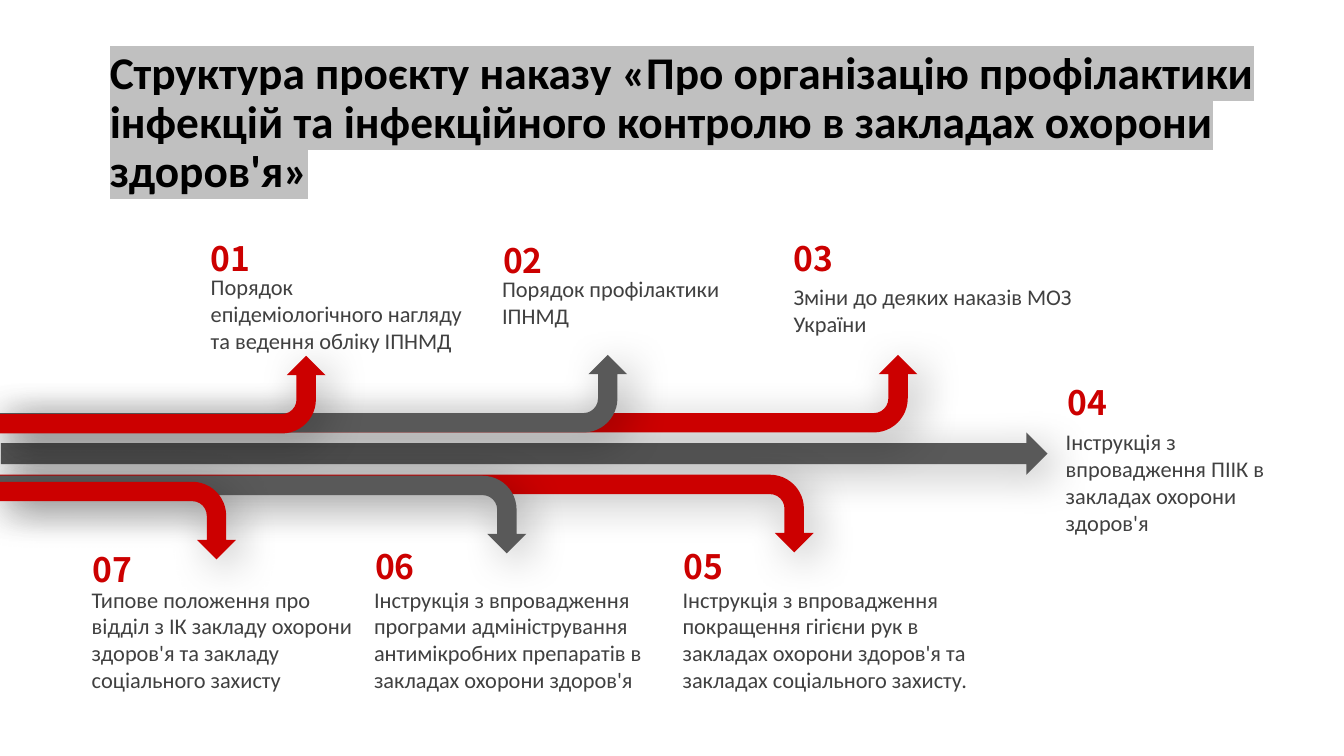
from dataclasses import dataclass

from lxml import etree
from pptx import Presentation
from pptx.dml.color import RGBColor
from pptx.enum.shapes import MSO_SHAPE
from pptx.enum.text import MSO_ANCHOR, MSO_AUTO_SIZE
from pptx.oxml.ns import qn
from pptx.util import Emu, Pt

PX = 9144  # EMU per px, 100 px to the inch
RIGHT_ARROW, BENT_ARROW = MSO_SHAPE.RIGHT_ARROW, MSO_SHAPE.BENT_ARROW
MIDDLE, GROW = MSO_ANCHOR.MIDDLE, MSO_AUTO_SIZE.SHAPE_TO_FIT_TEXT
COLORS = {"red": "CC0000", "gray": "595959", "text": "404040",
          "title": "000000", "highlight": "C0C0C0", "shadow": "000000"}
TEXT_FONT, NUMBER_FONT = "Calibri", "Noto Sans CJK SC"
BEND = 77  # height of a bent arrow
LINE, PAD = 27, 7  # text line height and total vertical padding
TITLE = ("Структура проєкту наказу «Про організацію профілактики інфекцій "
         "та інфекційного контролю в закладах охорони здоров'я»")


@dataclass(frozen=True)
class Branch:
    length: int
    top: int
    up: bool
    color: str


@dataclass(frozen=True)
class Label:
    number: str
    number_x: int
    number_y: int
    x: int
    y: int
    width: int
    lines: int
    text: str
    number_width: int = 141


BRANCHES = [
    Branch(910, 352, True, "red"),
    Branch(807, 471, False, "red"),
    Branch(622, 352, True, "gray"),
    Branch(323, 353, True, "red"),
    Branch(522, 472, False, "gray"),
    Branch(234, 478, False, "red"),
]

LABELS = [
    Label("01", 202, 232, 202, 267, 267, 3,
          "Порядок епідеміологічного нагляду та ведення обліку ІПНМД"),
    Label("02", 492, 234, 491, 269, 268, 2, "Порядок профілактики ІПНМД"),
    Label("03", 780, 232, 780, 277, 332, 2,
          "Зміни до деяких наказів МОЗ України"),
    Label("04", 1052, 375, 1050, 421, 265, 4,
          "Інструкція з впровадження ПІІК в закладах охорони здоров'я", 281),
    Label("05", 671, 538, 670, 577, 309, 4,
          "Інструкція з впровадження покращення гігієни рук в закладах "
          "охорони здоров'я та закладах соціального захисту."),
    Label("06", 365, 538, 364, 577, 286, 4,
          "Інструкція з впровадження програми адміністрування "
          "антимікробних препаратів в закладах охорони здоров'я"),
    Label("07", 85, 541, 84, 577, 286, 4,
          "Типове положення про відділ з ІК закладу охорони здоров'я "
          "та закладу соціального захисту", 150),
]


def px(value: float) -> Emu:
    return Emu(round(value * PX))


def rgb(name: str) -> RGBColor:
    return RGBColor.from_string(COLORS[name])


def add_color(parent, name: str):
    return etree.SubElement(parent, qn("a:srgbClr"), val=COLORS[name])


def add_arrow(s, preset, x: float, y: float, w: int, h: int, color: str):
    sp = s.shapes.add_shape(preset, px(x), px(y), px(w), px(h))
    sp.fill.solid()
    sp.fill.fore_color.rgb = rgb(color)
    sp.line.fill.background()
    sp.shadow.inherit = False
    # Soft shadow towards the lower right
    effects = sp._element.spPr.find(qn("a:effectLst"))
    shadow = etree.SubElement(
        effects, qn("a:outerShdw"), blurRad=str(Pt(30)), dist=str(Pt(8)),
        dir=str(45 * 60000), algn="tl", rotWithShape="0")
    etree.SubElement(add_color(shadow, "shadow"), qn("a:alpha"), val="30000")
    return sp


def add_branch(s, branch: Branch) -> None:
    # The frame is upright; a quarter turn about its centre lays it down
    x = (branch.length - BEND) / 2
    y = branch.top + (BEND - branch.length) / 2
    sp = add_arrow(s, BENT_ARROW, x, y, BEND, branch.length, branch.color)
    sp.rotation = 90 if branch.up else 270
    xfrm = sp._element.spPr.xfrm
    xfrm.set("flipH", "1")
    if not branch.up:
        xfrm.set("flipV", "1")


def add_text(s, x: int, y: int, w: int, h: int, text: str, size: float,
             color: str, font: str = TEXT_FONT, bold: bool = False):
    tf = s.shapes.add_textbox(px(x), px(y), px(w), px(h)).text_frame
    tf.word_wrap = True
    p = tf.paragraphs[0]
    p.add_run().text = text
    p.font.size = Pt(size)
    p.font.name = font
    p.font.bold = bold
    p.font.color.rgb = rgb(color)
    return tf


def add_label_text(s, *args, **kwargs) -> None:
    tf = add_text(s, *args, **kwargs)
    tf.auto_size = GROW
    tf.margin_left = tf.margin_right = px(7)
    tf.margin_top = tf.margin_bottom = px(4)


def add_label(s, label: Label) -> None:
    add_label_text(s, label.number_x, label.number_y, label.number_width, 48,
                   label.number, 24, "red", font=NUMBER_FONT, bold=True)
    add_label_text(s, label.x, label.y, label.width,
                   label.lines * LINE + PAD, label.text, 16, "text")


def add_title(s) -> None:
    tf = add_text(s, 99, 55, 1189, 135, TITLE, 32.4, "title", bold=True)
    tf.vertical_anchor = MIDDLE
    p = tf.paragraphs[0]
    p.line_spacing = 0.9
    r_pr = p.runs[0]._r.get_or_add_rPr()
    add_color(etree.SubElement(r_pr, qn("a:highlight")), "highlight")


def main() -> None:
    prs = Presentation()
    prs.slide_width, prs.slide_height = px(1333), px(750)
    s = prs.slides.add_slide(prs.slide_layouts[6])
    add_title(s)
    # Main arrow and its branches
    add_arrow(s, RIGHT_ARROW, 1, 429, 1038, 42, "gray")
    for branch in BRANCHES:
        add_branch(s, branch)
    # Numbered captions
    for label in LABELS:
        add_label(s, label)
    prs.save("out.pptx")


if __name__ == "__main__":
    main()
